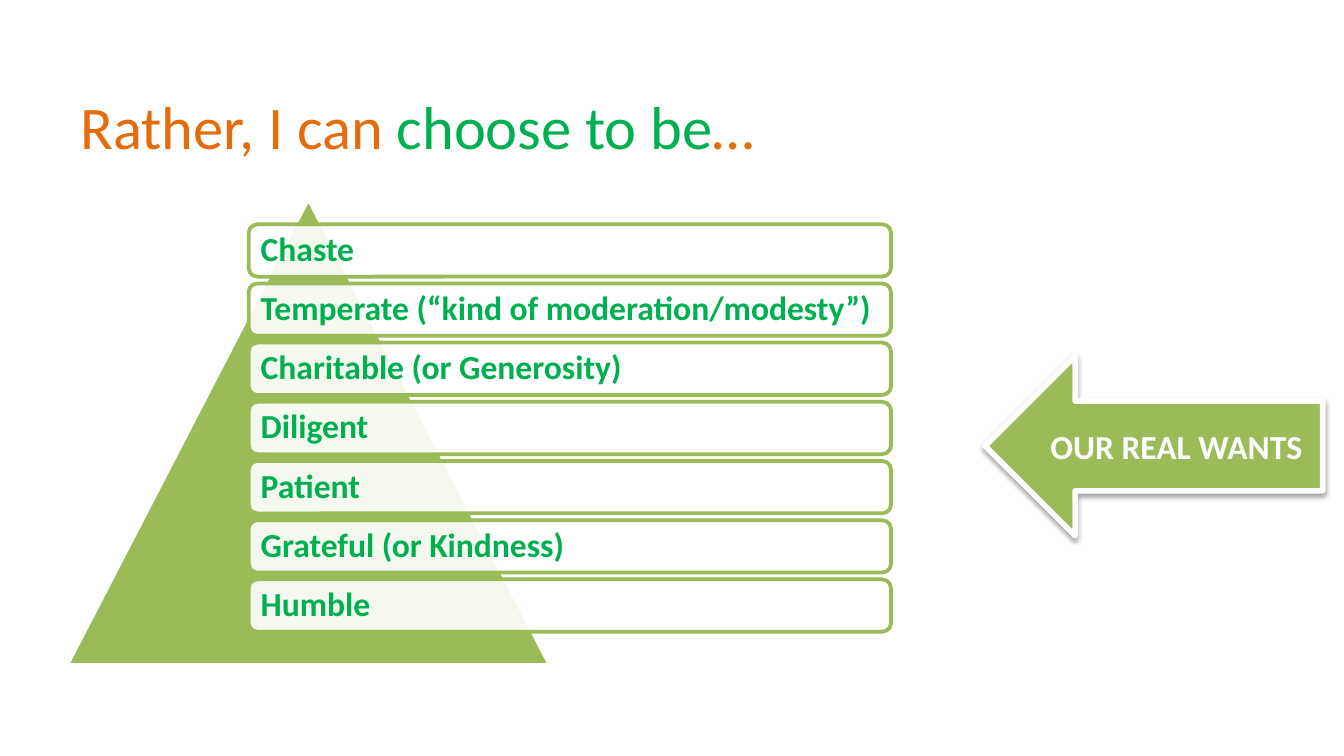
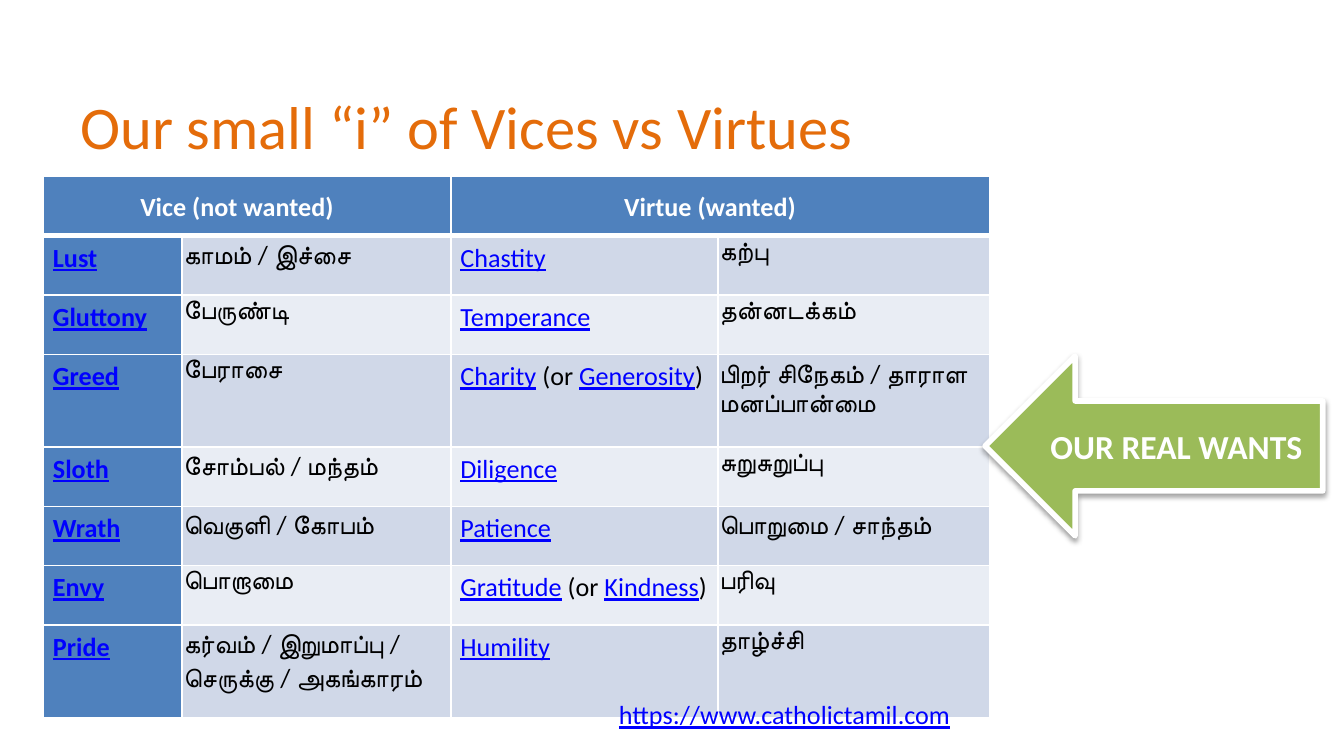
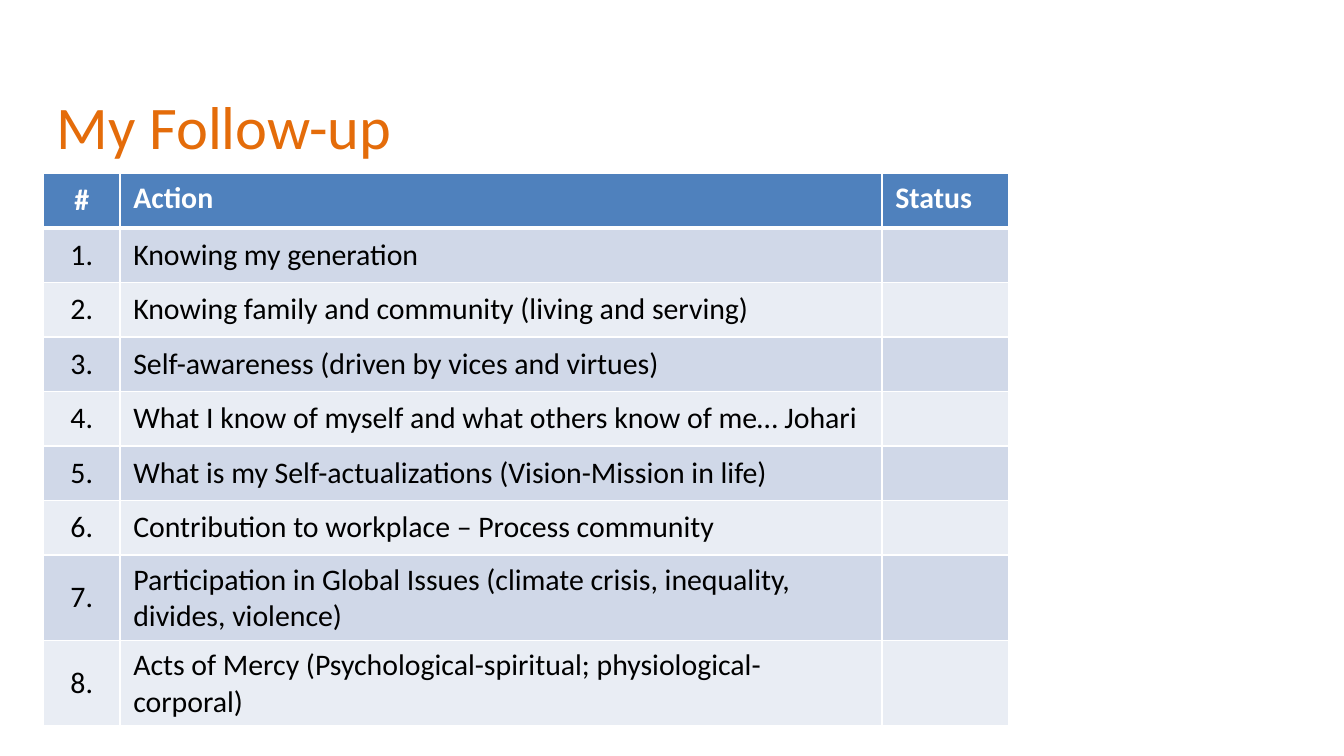
from dataclasses import dataclass
from typing import NamedTuple

from lxml.etree import SubElement
from pptx import Presentation
from pptx.dml.color import RGBColor
from pptx.enum.shapes import MSO_SHAPE
from pptx.enum.text import MSO_ANCHOR, PP_ALIGN
from pptx.oxml.ns import qn
from pptx.util import Cm, Pt


@dataclass(frozen=True)
class Theme:
    """Colours, type sizes and font shared by the slides."""
    font: str = "Calibri"
    white: str = "FFFFFF"
    black: str = "000000"
    orange: str = "E46C0A"
    green: str = "00B050"
    olive: str = "9BBB59"
    blue: str = "4F81BD"
    link: str = "0000FF"
    bands: tuple = ("D0D8E8", "E9EDF4")
    title_size: float = 32.4
    label_size: float = 18
    action_size: float = 16
    vice_size: float = 14


class Box(NamedTuple):
    """A region of the slide in centimetres."""
    left: float
    top: float
    width: float
    height: float

    def lengths(self):
        """Return the region as slide lengths."""
        return [Cm(side) for side in self]


THEME = Theme()
WANTS_BOX = Box(18.62, 6.73, 6.38, 3.4)
TITLE_BOX = Box(1.27, 1.57, 17.37, 1.6)
LINK = {"color": THEME.link, "underline": True}
DEFAULT_INSET = (0.25, 0.13, 0.25, 0.13)

VIRTUES = [
    "Chaste",
    "Temperate (“kind of moderation/modesty”)",
    "Charitable (or Generosity)",
    "Diligent",
    "Patient",
    "Grateful (or Kindness)",
    "Humble",
]

VICES = [
    ("Lust", "காமம் / இச்சை", ["Chastity"], "கற்பு"),
    ("Gluttony", "பேருண்டி", ["Temperance"], "தன்னடக்கம்"),
    ("Greed", "பேராசை", ["Charity", "Generosity"], "பிறர் சிநேகம் / தாராள மனப்பான்மை"),
    ("Sloth", "சோம்பல் / மந்தம்", ["Diligence"], "சுறுசுறுப்பு"),
    ("Wrath", "வெகுளி / கோபம்", ["Patience"], "பொறுமை / சாந்தம்"),
    ("Envy", "பொறாமை", ["Gratitude", "Kindness"], "பரிவு"),
    ("Pride", "கர்வம் / இறுமாப்பு / செருக்கு / அகங்காரம்", ["Humility"], "தாழ்ச்சி"),
]

ACTIONS = [
    "Knowing my generation",
    "Knowing family and community (living and serving)",
    "Self-awareness (driven by vices and virtues)",
    "What I know of myself and what others know of me… Johari",
    "What is my Self-actualizations (Vision-Mission in life)",
    "Contribution to workplace – Process community",
    "Participation in Global Issues (climate crisis, inequality, divides, violence)",
    "Acts of Mercy (Psychological-spiritual; physiological-corporal)",
]


def write(holder, text, size, color=THEME.black, bold=False, underline=False,
          align=PP_ALIGN.LEFT, anchor=MSO_ANCHOR.MIDDLE, inset=DEFAULT_INSET, spacing=None):
    """Write a string, or (string, format) runs, into a shape or table cell."""
    frame = holder.text_frame
    frame.word_wrap = True
    settings = holder if hasattr(holder, "margin_left") else frame
    settings.vertical_anchor = anchor
    for side, margin in zip(("left", "top", "right", "bottom"), inset):
        setattr(settings, f"margin_{side}", Cm(margin))
    paragraph = frame.paragraphs[0]
    paragraph.alignment = align
    if spacing:
        paragraph.line_spacing = spacing
    for words, changes in [(text, {})] if isinstance(text, str) else text:
        look = {"color": color, "underline": underline} | changes
        run = paragraph.add_run()
        run.text = words
        run.font.name = THEME.font
        run.font.size = Pt(size)
        run.font.bold = bold
        run.font.underline = look["underline"]
        run.font.color.rgb = RGBColor.from_string(look["color"])


def add_figure(shapes, preset, box, fill, line, line_width):
    """Add a preset shape with a plain fill and outline."""
    figure = shapes.add_shape(preset, *box.lengths())
    figure.shadow.inherit = False
    figure.fill.solid()
    figure.fill.fore_color.rgb = RGBColor.from_string(fill)
    figure.line.color.rgb = RGBColor.from_string(line)
    figure.line.width = Pt(line_width)
    return figure


def set_alpha(color_element, percent):
    """Make a colour element partly transparent."""
    SubElement(color_element, qn("a:alpha"), val=str(percent * 1000))


def add_title(slide, text, box=TITLE_BOX):
    """Place the slide title."""
    title = slide.shapes.add_textbox(*box.lengths())
    write(title, text, THEME.title_size, color=THEME.orange)


def add_pyramid(slide, box):
    """Draw the triangle with its stack of virtue labels."""
    pyramid = slide.shapes.add_group_shape().shapes
    triangle = Box(box.left, box.top, 9.12, box.height)
    add_figure(pyramid, MSO_SHAPE.ISOSCELES_TRIANGLE, triangle, THEME.olive, THEME.white, 2)
    indent, height = 3.43, 0.99
    for row, virtue in enumerate(VIRTUES):
        place = Box(box.left + indent, box.top + 0.48 + row * height * 1.13,
                    box.width - indent, height)
        label = add_figure(pyramid, MSO_SHAPE.ROUNDED_RECTANGLE, place,
                           THEME.white, THEME.olive, 2)
        set_alpha(label.fill._xPr.find(f"{qn('a:solidFill')}/{qn('a:srgbClr')}"), 90)
        write(label, virtue, THEME.label_size, color=THEME.green, bold=True,
              inset=(0.18,) * 4, spacing=0.9)


def add_wants_arrow(slide, box=WANTS_BOX):
    """Draw the shadowed arrow that points left."""
    arrow = add_figure(slide.shapes, MSO_SHAPE.RIGHT_ARROW, box, THEME.olive, THEME.white, 3)
    properties = arrow._element.spPr
    properties.find(qn("a:xfrm")).set("flipH", "1")
    shadow = SubElement(properties.find(qn("a:effectLst")), qn("a:outerShdw"),
                        blurRad=str(Pt(3.1)), dist=str(Pt(1.6)), dir="5400000",
                        rotWithShape="0")
    set_alpha(SubElement(shadow, qn("a:srgbClr"), val=THEME.black), 38)
    write(arrow, "OUR REAL WANTS", THEME.label_size, color=THEME.white, bold=True,
          align=PP_ALIGN.CENTER)


def paint_cell(cell, fill, bottom_width=1):
    """Give a cell its white borders and its fill."""
    for side in "LRTB":
        width = bottom_width if side == "B" else 1
        border = SubElement(cell._tc.get_or_add_tcPr(), qn(f"a:ln{side}"), w=str(Pt(width)))
        SubElement(SubElement(border, qn("a:solidFill")), qn("a:srgbClr"), val=THEME.white)
    cell.fill.solid()
    cell.fill.fore_color.rgb = RGBColor.from_string(fill)


def add_banded_table(slide, left, top, widths, heights):
    """Add a table with a blue header row and banded body rows."""
    box = Box(left, top, sum(widths), sum(heights))
    table = slide.shapes.add_table(len(heights), len(widths), *box.lengths()).table
    for column, width in zip(table.columns, widths):
        column.width = Cm(width)
    for index, (row, height) in enumerate(zip(table.rows, heights)):
        row.height = Cm(height)
        for cell in row.cells:
            if index:
                paint_cell(cell, THEME.bands[(index - 1) % 2])
            else:
                paint_cell(cell, THEME.blue, bottom_width=3)
    return table


def add_vice_table(slide, left, top):
    """Set each vice beside its virtue, in English and Tamil."""
    single, double = 1.12, 1.75
    heights = [single] * 3 + [double] + [single] * 3 + [double]
    table = add_banded_table(slide, left, top, [2.62, 5.08, 5.05, 5.13], heights)
    for column, heading in ((0, "Vice (not wanted)"), (2, "Virtue (wanted)")):
        cell = table.cell(0, column)
        cell.merge(table.cell(0, column + 1))
        write(cell, heading, THEME.vice_size, color=THEME.white, bold=True,
              align=PP_ALIGN.CENTER, inset=(0.18, 0.08, 0.56, 0.08), spacing=1.07)
    english = {"inset": (0.18, 0.08, 0.18, 0.08), "anchor": MSO_ANCHOR.TOP, "spacing": 1.07}
    tamil = english | {"inset": (0.03,) * 4}
    for row, (vice, vice_tamil, virtues, virtue_tamil) in enumerate(VICES, 1):
        virtue = [(virtues[0], LINK)]
        for other in virtues[1:]:
            virtue += [(" (or ", {}), (other, LINK), (")", {})]
        table.cell(row, 0).fill.fore_color.rgb = RGBColor.from_string(THEME.blue)
        write(table.cell(row, 0), vice, THEME.vice_size, bold=True, **LINK, **english)
        write(table.cell(row, 1), vice_tamil, THEME.vice_size, **tamil)
        write(table.cell(row, 2), virtue, THEME.vice_size, **english)
        write(table.cell(row, 3), virtue_tamil, THEME.vice_size, **tamil)


def add_source_address(slide, box):
    """Place the web address under the table."""
    address = slide.shapes.add_textbox(*box.lengths())
    write(address, "https://www.catholictamil.com", THEME.vice_size,
          align=PP_ALIGN.RIGHT, anchor=MSO_ANCHOR.TOP, **LINK)


def add_action_table(slide, left, top):
    """List the numbered actions with an empty status column."""
    table = add_banded_table(slide, left, top, [1.45, 14.4, 2.39], [1.03] * (len(ACTIONS) + 1))
    header = {"size": THEME.action_size, "color": THEME.white, "bold": True}
    write(table.cell(0, 0), "#", align=PP_ALIGN.CENTER, **header)
    write(table.cell(0, 1), "Action", anchor=MSO_ANCHOR.TOP, **header)
    write(table.cell(0, 2), "Status", anchor=MSO_ANCHOR.TOP, **header)
    for number, action in enumerate(ACTIONS, 1):
        write(table.cell(number, 0), f"{number}.", THEME.action_size, align=PP_ALIGN.CENTER)
        write(table.cell(number, 1), action, THEME.action_size)


def build_choice_slide(slide):
    """Build the slide of virtues to choose."""
    add_title(slide, [("Rather, I can ", {}), ("choose to be", {"color": THEME.green}), ("…", {})])
    add_pyramid(slide, Box(1.27, 3.76, 15.57, 8.81))
    add_wants_arrow(slide)


def build_vices_slide(slide):
    """Build the slide that compares vices and virtues."""
    add_title(slide, "Our small “i” of Vices vs Virtues")
    add_vice_table(slide, 0.82, 3.34)
    add_source_address(slide, Box(11.43, 13.08, 6.78, 0.86))
    add_wants_arrow(slide)


def build_follow_up_slide(slide):
    """Build the slide of follow-up actions."""
    add_title(slide, "My Follow-up", Box(0.82, 1.57, 17.8, 1.6))
    add_action_table(slide, 0.82, 3.28)


def main():
    """Build and save the presentation."""
    presentation = Presentation()
    presentation.slide_width, presentation.slide_height = Cm(25.4), Cm(14.29)
    blank = presentation.slide_layouts[6]
    for build in (build_choice_slide, build_vices_slide, build_follow_up_slide):
        build(presentation.slides.add_slide(blank))
    presentation.save("out.pptx")


if __name__ == "__main__":
    main()
